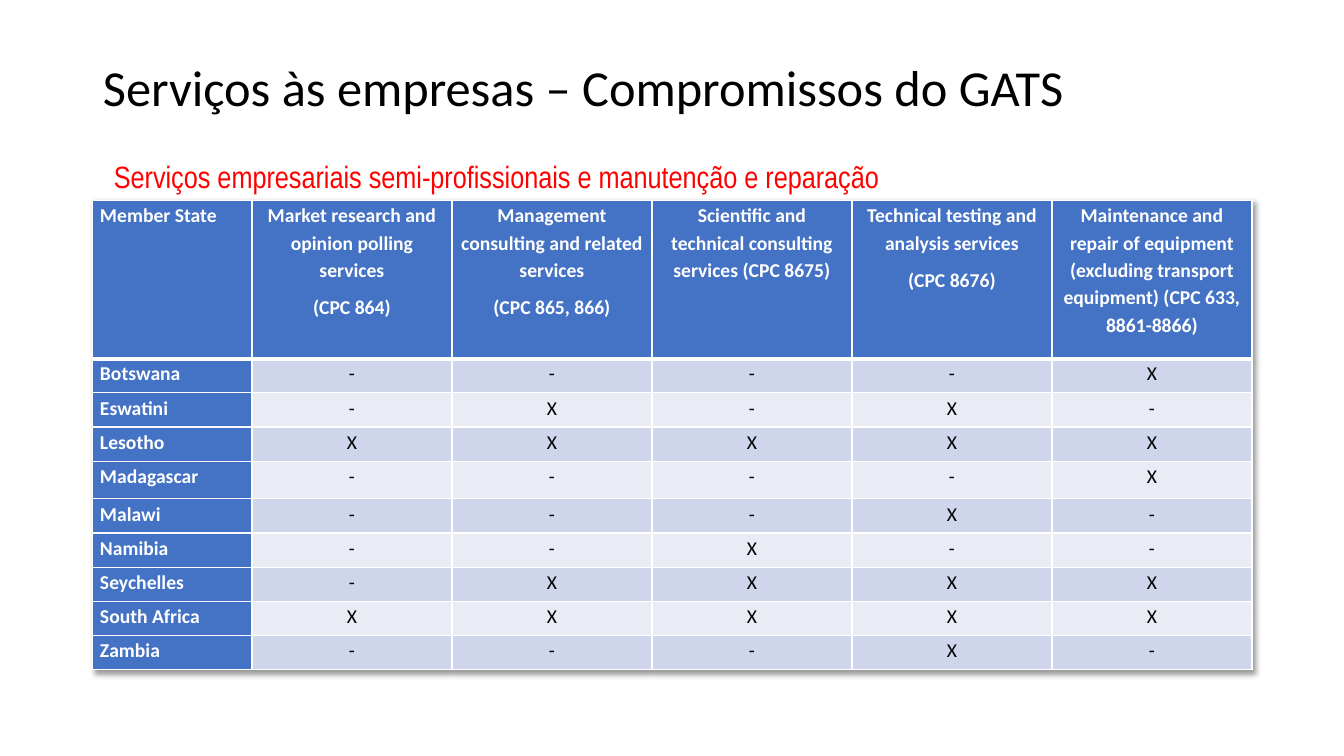
import dataclasses

import lxml.etree
import pptx
import pptx.dml.color
import pptx.enum.text
import pptx.oxml.ns
import pptx.table
import pptx.util

Cm = pptx.util.Cm
Pt = pptx.util.Pt
qn = pptx.oxml.ns.qn
ALIGN = pptx.enum.text.PP_ALIGN
ANCHOR = pptx.enum.text.MSO_ANCHOR

HUES = {
    "white": "FFFFFF",
    "black": "000000",
    "red": "FF0000",
    "blue": "4472C4",
    "dark": "CFD5EA",
    "light": "E9EBF5",
}
HEADS = [
    ["Member State"],
    ["Market research and opinion polling services", "(CPC 864)"],
    ["Management consulting and related services", "(CPC 865, 866)"],
    ["Scientific and technical consulting services (CPC 8675)"],
    ["Technical testing and analysis services", "(CPC 8676)"],
    ["Maintenance and repair of equipment (excluding transport equipment) "
     "(CPC 633, 8861-8866)"],
]
FIRST, WIDE = 4.01, 5.04
HEAD, LINE = 3.99, 0.86


@dataclasses.dataclass
class State:
    name: str
    marks: str
    height: float = LINE


@dataclasses.dataclass
class Look:
    fill: str
    ink: str
    bold: bool
    align: ALIGN
    top: float = 1
    bottom: float = 1


STATES = [
    State("Botswana", "----X"),
    State("Eswatini", "-X-X-"),
    State("Lesotho", "XXXXX"),
    State("Madagascar", "----X", 0.95),
    State("Malawi", "---X-"),
    State("Namibia", "--X--"),
    State("Seychelles", "-XXXX"),
    State("South Africa", "XXXXX"),
    State("Zambia", "---X-"),
]


def hue(name: str) -> pptx.dml.color.RGBColor:
    return pptx.dml.color.RGBColor.from_string(HUES[name])


def style(para, face: str, size: float, ink: str, bold: bool = False) -> None:
    para.font.name = face
    para.font.size = Pt(size)
    para.font.bold = bold
    para.font.color.rgb = hue(ink)


def paint(node, name: str):
    fill = lxml.etree.SubElement(node, qn("a:solidFill"))
    return lxml.etree.SubElement(fill, qn("a:srgbClr"), val=HUES[name])


def edge(cell: pptx.table._Cell, look: Look) -> None:
    props = cell._tc.get_or_add_tcPr()
    sides = {"L": 1, "R": 1, "T": look.top, "B": look.bottom}
    for place, (side, width) in enumerate(sides.items()):
        line = lxml.etree.Element(qn(f"a:ln{side}"), w=str(Pt(width)))
        paint(line, "white")
        props.insert(place, line)


def write(cell: pptx.table._Cell, lines: list[str], look: Look) -> None:
    cell.margin_left = cell.margin_right = Cm(0.18)
    cell.margin_top = cell.margin_bottom = 0
    cell.fill.solid()
    cell.fill.fore_color.rgb = hue(look.fill)
    cell.text = "\n".join(lines)
    for para in cell.text_frame.paragraphs:
        para.alignment = look.align
        para.line_spacing = 1.15
        para.space_before = Pt(1)
        para.space_after = Pt(6)
        style(para, "Calibri", 14, look.ink, look.bold)
    edge(cell, look)


def shade(table: pptx.table.Table) -> None:
    effect = lxml.etree.Element(qn("a:effectLst"))
    table._tbl.tblPr.insert(0, effect)
    shadow = lxml.etree.SubElement(
        effect, qn("a:outerShdw"), blurRad=str(Pt(4)), dist=str(Pt(3)),
        dir="2700000", algn="tl", rotWithShape="0")
    tint = lxml.etree.SubElement(shadow, qn("a:srgbClr"), val=HUES["black"])
    lxml.etree.SubElement(tint, qn("a:alpha"), val="40000")


def add_title(slide) -> None:
    title = slide.shapes.title
    title.left, title.top = Cm(2.34), Cm(1.01)
    title.width, title.height = Cm(29.21), Cm(3.68)
    frame = title.text_frame
    frame.text = "Serviços às empresas – Compromissos do GATS"
    frame.vertical_anchor = ANCHOR.MIDDLE
    frame.margin_bottom = Cm(1.27)
    para = frame.paragraphs[0]
    para.alignment = ALIGN.LEFT
    para.line_spacing = 0.9
    style(para, "Calibri", 36, "black")


def add_grid(slide) -> None:
    high = HEAD + sum(state.height for state in STATES)
    table = slide.shapes.add_table(
        len(STATES) + 1, len(HEADS), Cm(2.34), Cm(5.05),
        Cm(FIRST + WIDE * (len(HEADS) - 1)), Cm(high)).table
    table.first_col = True
    shade(table)
    for spot, column in enumerate(table.columns):
        column.width = Cm(WIDE if spot else FIRST)
    table.rows[0].height = Cm(HEAD)
    for spot, lines in enumerate(HEADS):
        align = ALIGN.CENTER if spot else ALIGN.LEFT
        write(table.cell(0, spot), lines,
              Look("blue", "white", True, align, bottom=3))
    for row, state in enumerate(STATES, 1):
        table.rows[row].height = Cm(state.height)
        top = 3 if row == 1 else 1
        write(table.cell(row, 0), [state.name],
              Look("blue", "white", True, ALIGN.LEFT, top))
        band = Look("dark" if row % 2 else "light", "black", False,
                    ALIGN.CENTER, top)
        for spot, mark in enumerate(state.marks, 1):
            write(table.cell(row, spot), [mark], band)


def add_topic(slide) -> None:
    box = slide.shapes.add_textbox(Cm(2.62), Cm(3.86), Cm(24.64), Cm(2.13))
    frame = box.text_frame
    frame.word_wrap = True
    frame.text = ("Serviços empresariais semi-profissionais "
                  "e manutenção e reparação")
    style(frame.paragraphs[0], "Arial Narrow", 22, "red")


def main() -> None:
    deck = pptx.Presentation()
    deck.slide_width, deck.slide_height = Cm(33.87), Cm(19.05)
    slide = deck.slides.add_slide(deck.slide_layouts[5])
    add_title(slide)
    add_grid(slide)
    add_topic(slide)
    deck.save("out.pptx")


if __name__ == "__main__":
    main()
